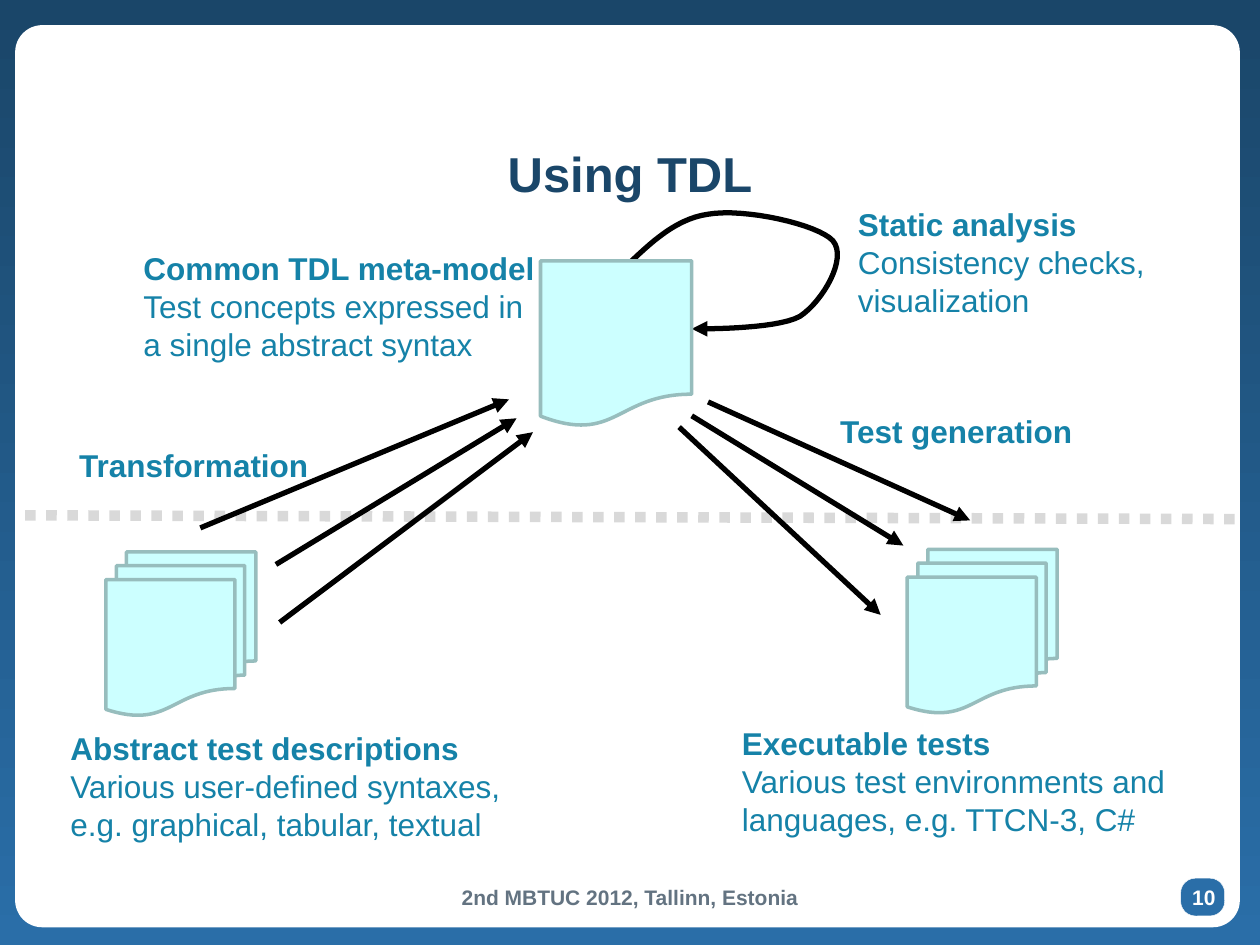
from lxml import etree
from pptx import Presentation
from pptx.dml.color import RGBColor
from pptx.enum.dml import MSO_LINE
from pptx.enum.shapes import MSO_CONNECTOR, MSO_SHAPE
from pptx.enum.text import MSO_ANCHOR, PP_ALIGN
from pptx.oxml.ns import qn
from pptx.util import Inches, Pt

ROUND = MSO_SHAPE.ROUNDED_RECTANGLE
PAGE = MSO_SHAPE.FLOWCHART_DOCUMENT
STACK = MSO_SHAPE.FLOWCHART_MULTIDOCUMENT
STRAIGHT = MSO_CONNECTOR.STRAIGHT
DOTS = MSO_LINE.ROUND_DOT
MIDDLE = MSO_ANCHOR.MIDDLE
LEFT, CENTER = PP_ALIGN.LEFT, PP_ALIGN.CENTER

COLS, ROWS = 100, 75
WIDE, HIGH = Inches(10), Inches(7.5)
NAVY, BLUE, TEAL = "1A4669", "2A6EA8", "1582A8"
WHITE, BLACK, GREY, SLATE = "FFFFFF", "000000", "D9D9D9", "637381"
AQUA, EDGE = "CCFFFF", "97BDBD"

STACKS = [(8.4, 43.8, 11.9, 13), (72, 43.6, 11.9, 13)]
MODEL = (42.9, 20.7, 12, 13.2)
LABELS = [
    ((4.6, 57.4, 36.5, 10.1), ["Abstract test descriptions",
                               "Various user-defined syntaxes,",
                               "e.g. graphical, tabular, textual"]),
    ((57.9, 57, 35.9, 10.1), ["Executable tests",
                              "Various test environments and",
                              "languages, e.g. TTCN-3, C#"]),
    ((10.4, 19.3, 33.4, 10.1), ["Common TDL meta-model",
                                "Test concepts expressed in",
                                "a single abstract syntax"]),
    ((67.1, 15.8, 25.3, 10.1), ["Static analysis", "Consistency checks,",
                                "visualization"]),
    ((65.7, 32.2, 20.6, 4), ["Test generation"]),
    ((5.3, 34.9, 20.4, 4), ["Transformation"]),
]
ARROWS = [
    ((56.2, 31.9), (77, 41.3)), ((54.9, 33), (71.7, 43.3)),
    ((53.9, 33.9), (69.9, 48.8)), ((22.2, 49.4), (42.3, 34.3)),
    ((15.9, 41.9), (40.4, 31.7)), ((21.9, 44.8), (41, 33.2)),
]
LOOP = [(49.1, 21.7), (51.3, 19.6), (53.4, 17.4), (56.2, 17),
        (59.1, 16.5), (64.9, 17.8), (66.1, 19.1),
        (67.3, 20.5), (65.3, 23.9), (63.5, 25.1),
        (61.6, 26.2), (54.9, 26.1), (54.9, 26.1)]


def color(code):
    """Turn a hex string into a colour."""
    return RGBColor.from_string(code)


def spot(col, row):
    """Turn a grid position into slide lengths."""
    return round(WIDE * col / COLS), round(HIGH * row / ROWS)


def area(box):
    """Turn a grid box into left, top, width and height."""
    return *spot(*box[:2]), *spot(*box[2:])


def stroke(line, code, width):
    """Set the colour and width of a line."""
    line.fill.solid()
    line.fill.fore_color.rgb = color(code)
    line.width = Pt(width)


def point(shape):
    """Put a triangle at the end of a shape's line."""
    etree.SubElement(shape.get_or_add_ln(), qn("a:tailEnd"), type="triangle")


def style(para, size, code, bold=True, align=LEFT):
    """Format a whole paragraph."""
    para.alignment = align
    font = para.font
    font.name, font.size, font.bold = "Arial", Pt(size), bold
    font.color.rgb = color(code)


def block(slide, kind, box, fill, edge=None, width=1, bend=None):
    """Add a filled preset shape."""
    shape = slide.shapes.add_shape(kind, *area(box))
    shape.shadow.inherit = False
    shape.fill.solid()
    shape.fill.fore_color.rgb = color(fill)
    if edge:
        stroke(shape.line, edge, width)
    else:
        shape.line.fill.background()
    if bend is not None:
        shape.adjustments[0] = bend


def label(slide, box, lines, size=18, code=TEAL, align=LEFT, wrap=False):
    """Add text with a bold first line."""
    frame = slide.shapes.add_textbox(*area(box)).text_frame
    frame.word_wrap = wrap
    frame.text = "\n".join(lines)
    for num, para in enumerate(frame.paragraphs):
        style(para, size, code, num == 0, align)


def link(slide, start, end, code=BLACK, width=3):
    """Add a straight line and return it."""
    line = slide.shapes.add_connector(STRAIGHT, *spot(*start), *spot(*end))
    stroke(line.line, code, width)
    etree.SubElement(line.element.spPr, qn("a:effectLst"))
    return line


def curve(knots, steps=16):
    """List points along joined cubic curves."""
    dots = [knots[0]]
    for at in range(0, len(knots) - 1, 3):
        for step in range(1, steps + 1):
            t = step / steps
            u = 1 - t
            parts = (u ** 3, 3 * u * u * t, 3 * u * t * t, t ** 3)
            dots.append(tuple(sum(w * k[axis] for w, k in
                                  zip(parts, knots[at:at + 4]))
                              for axis in (0, 1)))
    return dots


def loop(slide, knots):
    """Add a curved arrow."""
    dots = [spot(*dot) for dot in curve(knots)]
    trace = slide.shapes.build_freeform(*dots[0])
    trace.add_line_segments(dots[1:], close=False)
    shape = trace.convert_to_shape()
    shape.shadow.inherit = False
    shape.fill.background()
    stroke(shape.line, BLACK, 3)
    point(shape)


def head(slide, box, text):
    """Place the title in front of the panel."""
    title = slide.shapes.title
    title.left, title.top, title.width, title.height = area(box)
    title.text_frame.text = text
    title.text_frame.vertical_anchor = MIDDLE
    style(title.text_frame.paragraphs[0], 28, NAVY, align=CENTER)
    title.element.getparent().append(title.element)


def frame(slide):
    """Draw the backdrop, panel and footer."""
    fill = slide.background.fill
    fill.gradient()
    fill.gradient_angle = 270
    for stop, code in zip(fill.gradient_stops, (NAVY, BLUE)):
        stop.color.rgb = color(code)
    block(slide, ROUND, (1.2, 2, 97.2, 71.6), WHITE, bend=0.03)
    block(slide, ROUND, (93.7, 69.7, 3.5, 3), BLUE, WHITE, 0.25, 0.39)
    label(slide, (19.9, 69.7, 60.2, 3.2), ["2nd MBTUC 2012, Tallinn, Estonia"],
          12, SLATE, CENTER, True)
    label(slide, (93, 69.7, 5.1, 2.7), ["10"], 12, WHITE, CENTER, True)


def main():
    """Build and save the slide."""
    deck = Presentation()
    deck.slide_width, deck.slide_height = WIDE, HIGH
    slide = deck.slides.add_slide(deck.slide_layouts[5])
    frame(slide)
    head(slide, (3.5, 10.4, 93, 6.7), "Using TDL")
    border = link(slide, (2, 40.9), (98.3, 41.2), GREY, 6)
    border.line.dash_style = DOTS
    for box in STACKS:
        block(slide, STACK, box, AQUA, EDGE, 2)
    loop(slide, LOOP)
    block(slide, PAGE, MODEL, AQUA, EDGE, 2)
    for start, end in ARROWS:
        point(link(slide, start, end))
    for box, lines in LABELS:
        label(slide, box, lines)
    deck.save("out.pptx")


if __name__ == "__main__":
    main()
